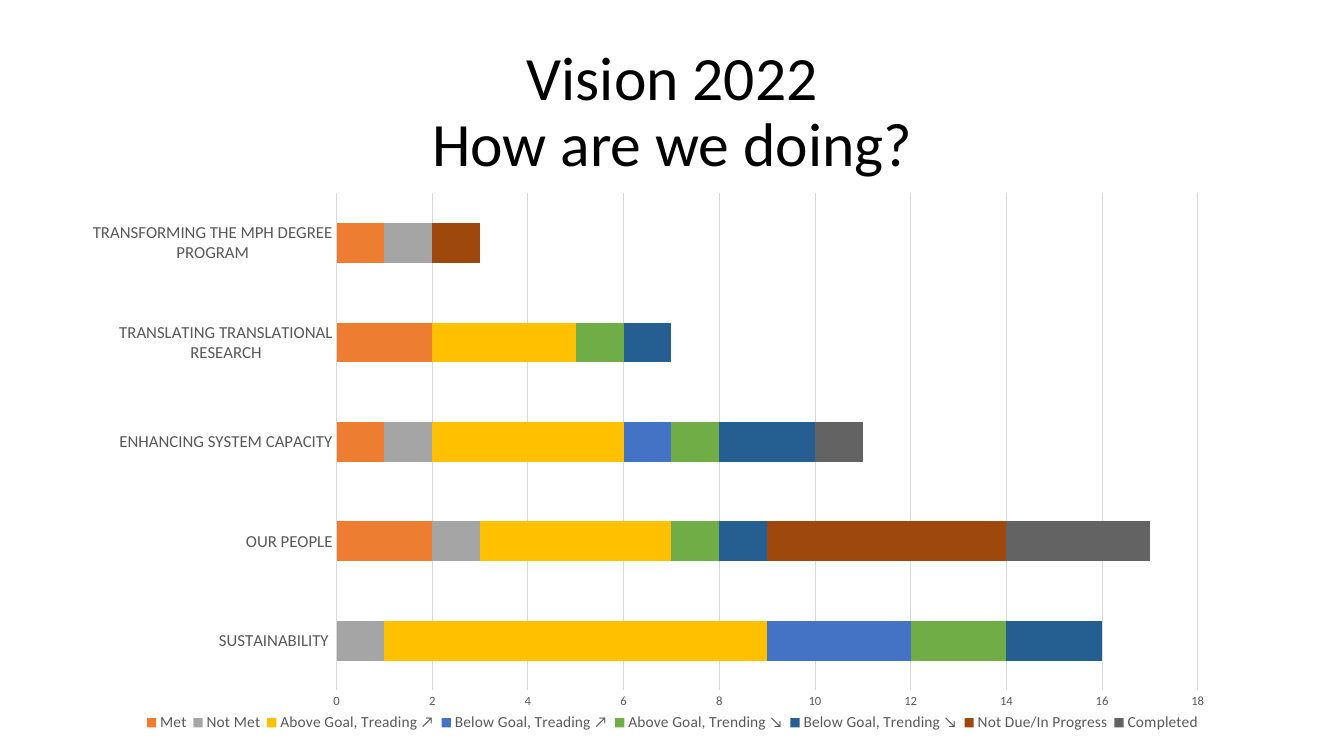
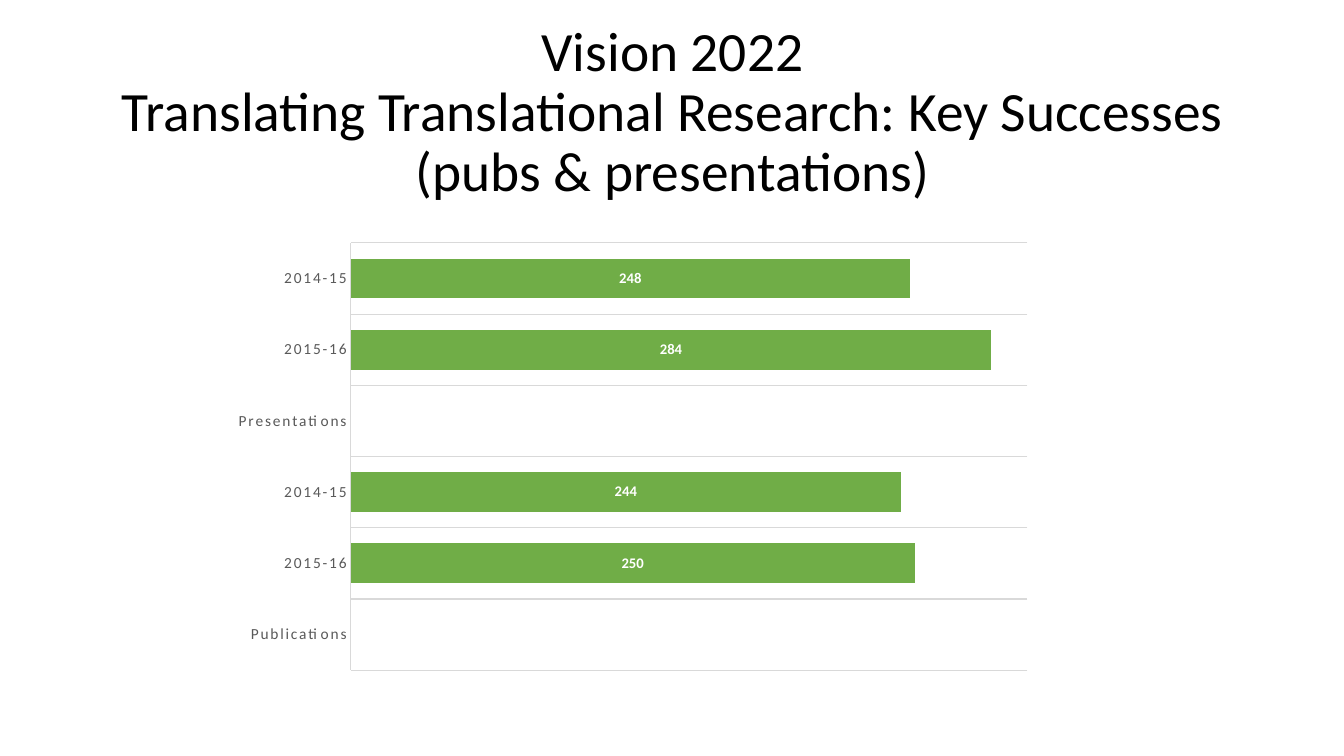
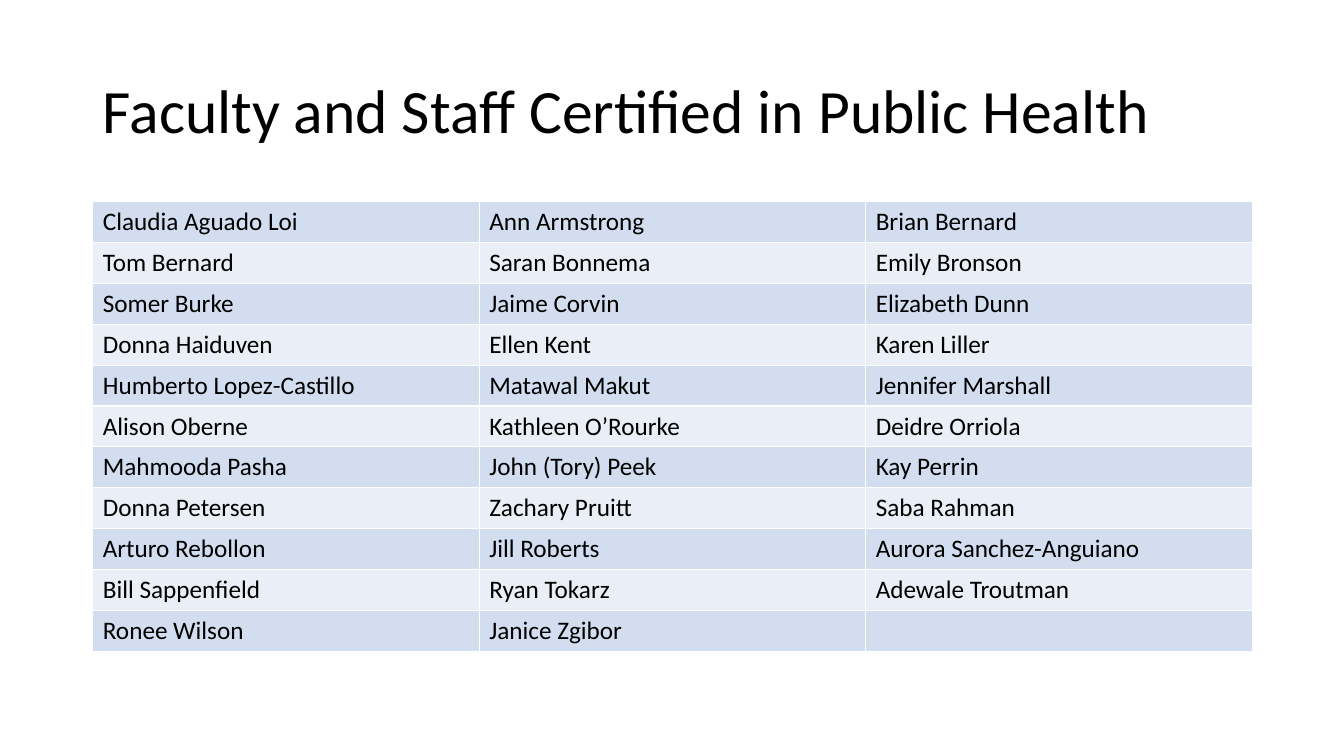
from copy import deepcopy

from lxml.etree import SubElement
from pptx import Presentation
from pptx.chart.data import CategoryChartData
from pptx.dml.color import RGBColor
from pptx.enum.chart import XL_CHART_TYPE, XL_LABEL_POSITION, XL_LEGEND_POSITION, XL_TICK_MARK
from pptx.enum.text import MSO_ANCHOR, MSO_AUTO_SIZE, PP_ALIGN
from pptx.oxml.ns import qn
from pptx.util import Inches, Pt

FONT = "Calibri"
BLACK = RGBColor(0x00, 0x00, 0x00)
WHITE = RGBColor(0xFF, 0xFF, 0xFF)
GRAY = RGBColor(0x59, 0x59, 0x59)
GRID = RGBColor(0xD9, 0xD9, 0xD9)
ORANGE = RGBColor(0xED, 0x7D, 0x31)
SILVER = RGBColor(0xA5, 0xA5, 0xA5)
GOLD = RGBColor(0xFF, 0xC0, 0x00)
BLUE = RGBColor(0x44, 0x72, 0xC4)
GREEN = RGBColor(0x70, 0xAD, 0x47)
NAVY = RGBColor(0x25, 0x5E, 0x91)
BROWN = RGBColor(0x9E, 0x48, 0x0E)
CHARCOAL = RGBColor(0x63, 0x63, 0x63)
BANDS = [RGBColor(0xD2, 0xDE, 0xEF), RGBColor(0xEA, 0xEF, 0xF7)]


def put_text(tf, text, size=18, align=PP_ALIGN.LEFT, spacing=None):
    p = tf.paragraphs[0]
    p.text = text
    p.alignment = align
    p.line_spacing = spacing
    for r in p.runs:
        r.font.name, r.font.size, r.font.color.rgb = FONT, Pt(size), BLACK
    for br in p._p.findall(qn("a:br")):
        br.append(deepcopy(p._p.find(qn("a:r")).find(qn("a:rPr"))))


def add_bars(s, box, cats, series, gap, plot_box, cat_size, legend_box=None):
    """Add a stacked bar chart; all boxes are left, top, width, height on the slide."""
    data = CategoryChartData()
    data.categories = cats
    for name, _, values in series:
        data.add_series(name, values)
    chart = s.shapes.add_chart(XL_CHART_TYPE.BAR_STACKED, *map(Inches, box), data).chart
    chart.has_title = False
    chart.has_legend = legend_box is not None
    chart.font.name, chart.font.size = FONT, Pt(10)
    plot = chart.plots[0]
    plot.gap_width, plot.overlap, plot.vary_by_categories = gap, 100, False
    for ser, (_, color, _) in zip(plot.series, series):
        ser.format.fill.solid()
        ser.format.fill.fore_color.rgb = color
    for axis, size in ((chart.category_axis, cat_size), (chart.value_axis, 9)):
        axis.major_tick_mark = axis.minor_tick_mark = XL_TICK_MARK.NONE
        axis.has_major_gridlines = False
        axis.format.line.fill.background()
        font = axis.tick_labels.font
        font.name, font.size, font.color.rgb = FONT, Pt(size), GRAY
    left, top, width, height = box
    area = chart._chartSpace.chart.plotArea
    parts = [(area, 0, plot_box, [("layoutTarget", "inner")])]
    if legend_box:
        chart.legend.position = XL_LEGEND_POSITION.BOTTOM
        chart.legend.include_in_layout = False
        font = chart.legend.font
        font.name, font.size, font.color.rgb = FONT, Pt(11), GRAY
        parts.append((chart.legend._element, 1, legend_box, []))
    for part, index, (x, y, w, h), settings in parts:
        layout = part.find(qn("c:layout"))
        if layout is None:
            layout = part.makeelement(qn("c:layout"))
            part.insert(index, layout)
        manual = SubElement(layout, qn("c:manualLayout"))
        shares = [("x", (x - left) / width), ("y", (y - top) / height),
                  ("w", w / width), ("h", h / height)]
        for tag, value in settings + [("xMode", "edge"), ("yMode", "edge")] + shares:
            SubElement(manual, qn(f"c:{tag}")).set("val", str(value))
    return chart


prs = Presentation()
prs.slide_width, prs.slide_height = Inches(13.33), Inches(7.5)

TITLES = [
    ("Vision 2022\vHow are we doing?", 44, PP_ALIGN.CENTER),
    ("Vision 2022\vTranslating Translational Research: Key Successes (pubs & presentations)",
     39.6, PP_ALIGN.CENTER),
    ("Faculty and Staff Certified in Public Health", 44, PP_ALIGN.LEFT),
]
for text, size, align in TITLES:
    title = prs.slides.add_slide(prs.slide_layouts[5]).shapes.title
    title.left, title.top, title.width, title.height = map(Inches, (0.92, 0.4, 11.5, 1.45))
    tf = title.text_frame
    tf.auto_size, tf.vertical_anchor = MSO_AUTO_SIZE.NONE, MSO_ANCHOR.MIDDLE
    put_text(tf, text, size=size, align=align, spacing=0.9)
progress_slide, research_slide, staff_slide = prs.slides

# Progress by goal area
goals = ["SUSTAINABILITY ", "OUR PEOPLE", "ENHANCING SYSTEM CAPACITY",
         "TRANSLATING TRANSLATIONAL RESEARCH", "TRANSFORMING THE MPH DEGREE PROGRAM"]
statuses = [
    ("Met", ORANGE, (None, 2, 1, 2, 1)),
    ("Not Met", SILVER, (1, 1, 1, None, 1)),
    ("Above Goal, Treading ↗", GOLD, (8, 4, 4, 3, None)),
    ("Below Goal, Treading ↗", BLUE, (3, None, 1, None, None)),
    ("Above Goal, Trending ↘", GREEN, (2, 1, 1, 1, None)),
    ("Below Goal, Trending ↘", NAVY, (2, 1, 2, 1, None)),
    ("Not Due/In Progress", BROWN, (None, 5, None, None, 1)),
    ("Completed", CHARCOAL, (None, 3, 1, None, None)),
]
chart = add_bars(progress_slide, (0.92, 1.81, 11.25, 5.69), goals, statuses,
                 gap=150, plot_box=(3.33, 1.92, 8.55, 4.93), cat_size=12,
                 legend_box=(1.38, 7.02, 10.57, 0.3))
axis = chart.value_axis
axis.minimum_scale, axis.maximum_scale, axis.major_unit = 0, 18, 2
axis.has_major_gridlines = True
lines = [axis.major_gridlines.format.line]

# Publications and presentations
years = ["Publications", "2015-16", "2014-15", "Presentations", "2015-16", "2014-15"]
counts = [("Series 1", GREEN, (None, 250, 244, None, 284, 248))]
chart = add_bars(research_slide, (2.21, 2.32, 8.14, 4.42), years, counts,
                 gap=79, plot_box=(3.48, 2.41, 6.71, 4.24), cat_size=11)
axis = chart.value_axis
axis.minimum_scale, axis.maximum_scale = 0, 300
axis.visible = False
axis = chart.category_axis
axis.has_major_gridlines = True
axis.tick_labels.font._rPr.set("spc", "120")
lines += [axis.format.line, axis.major_gridlines.format.line]
for line in lines:
    line.color.rgb, line.width = GRID, Pt(0.75)
labels = chart.plots[0].series[0].data_labels
labels.show_value, labels.position = True, XL_LABEL_POSITION.CENTER
font = labels.font
font.name, font.size, font.bold, font.color.rgb = FONT, Pt(10.5), True, WHITE

# Certified faculty and staff
people = [
    ("Claudia Aguado Loi", "Ann Armstrong", "Brian Bernard"),
    ("Tom Bernard", "Saran Bonnema", "Emily Bronson"),
    ("Somer Burke", "Jaime Corvin", "Elizabeth Dunn"),
    ("Donna Haiduven", "Ellen Kent", "Karen Liller"),
    ("Humberto Lopez-Castillo", "Matawal Makut", "Jennifer Marshall"),
    ("Alison Oberne", "Kathleen O’Rourke", "Deidre Orriola"),
    ("Mahmooda Pasha", "John (Tory) Peek", "Kay Perrin"),
    ("Donna Petersen", "Zachary Pruitt", "Saba Rahman"),
    ("Arturo Rebollon", "Jill Roberts", "Aurora Sanchez-Anguiano"),
    ("Bill Sappenfield", "Ryan Tokarz", "Adewale Troutman"),
    ("Ronee Wilson", "Janice Zgibor", ""),
]
table = staff_slide.shapes.add_table(len(people), 3, Inches(0.92), Inches(2),
                                     Inches(11.5), Inches(4.46)).table
table.first_row = table.horz_banding = False
for i, names in enumerate(people):
    for j, name in enumerate(names):
        cell = table.cell(i, j)
        if name:
            put_text(cell.text_frame, name)
        tcPr = cell._tc.get_or_add_tcPr()
        for side in ("lnL", "lnR", "lnT", "lnB"):
            ln = SubElement(tcPr, qn(f"a:{side}"), w=str(Pt(1)))
            fill = SubElement(ln, qn("a:solidFill"))
            SubElement(fill, qn("a:srgbClr"), val=str(WHITE))
        cell.fill.solid()
        cell.fill.fore_color.rgb = BANDS[i % 2]

prs.save("out.pptx")
